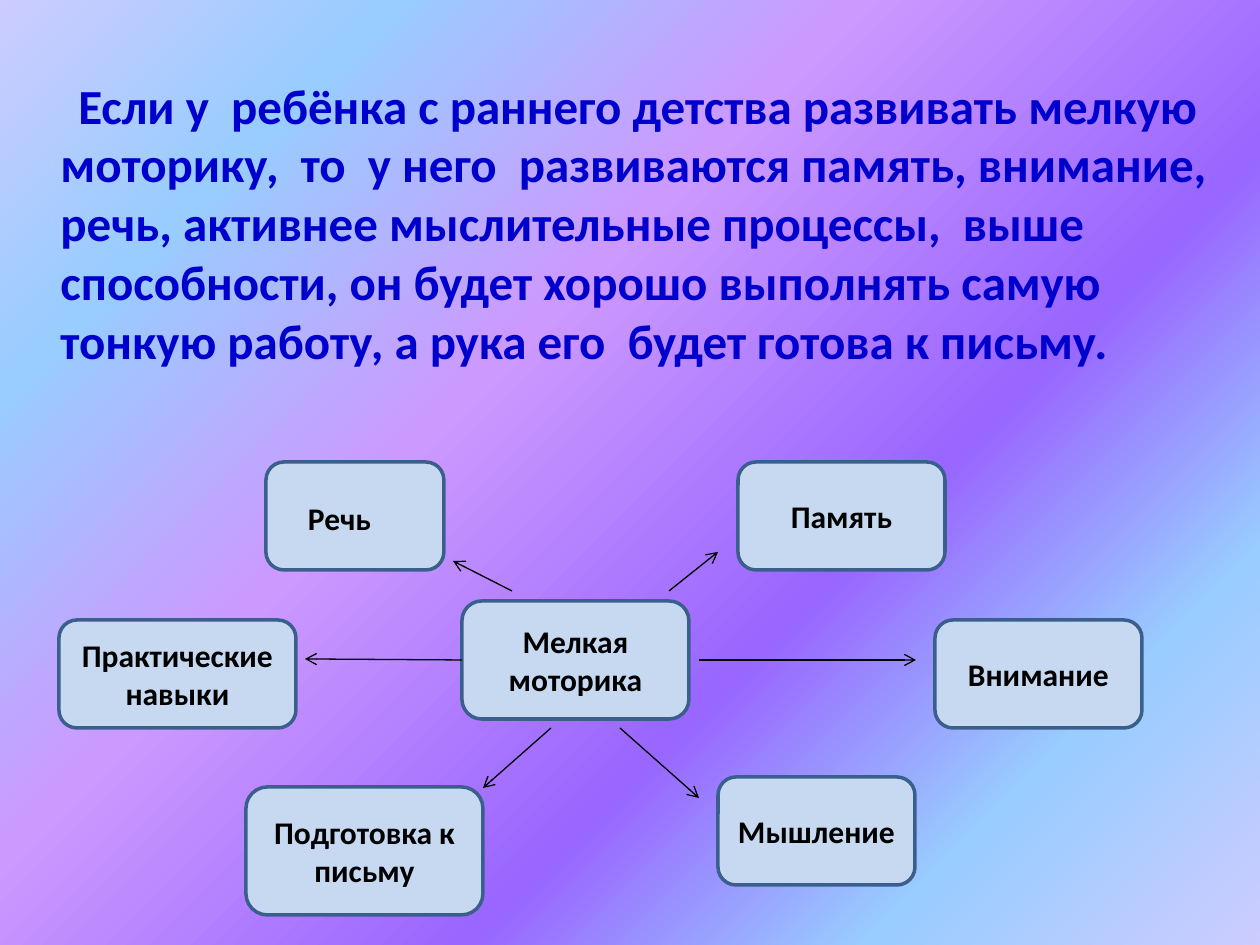
import pptx
import pptx.util
import pptx.dml.color
import pptx.enum.shapes
import pptx.enum.text
import pptx.oxml
import pptx.oxml.ns

SCALE = pptx.util.Inches(1) / 126
FONT = "Calibri"
COLORS = {
    "body": "0000CC", "label": "000000", "arrow": "000000",
    "box": "C6D9F1", "border": "3A5F8C",
    "lavender": "CCCCFF", "sky": "99CCFF", "violet": "9966FF", "pink": "CC99FF",
}
GRADIENT = [(0, "lavender"), (18, "sky"), (36, "violet"),
            (61, "pink"), (82, "sky"), (100, "lavender")]
BODY = ("Если у  ребёнка с раннего детства развивать мелкую моторику,  то  у него  "
        "развиваются память, внимание, речь, активнее мыслительные процессы,  выше "
        "способности, он будет хорошо выполнять самую тонкую работу, а рука его  "
        "будет готова к письму.")

# Label and box (left, top, width, height) within the diagram
HUB = ("Мелкая моторика", (403, 139, 227, 118))
SKILLS = [
    ("Мышление", (659, 315, 197, 108)),
    ("Практические навыки", (0, 158, 237, 108)),
    ("Подготовка к письму", (187, 325, 237, 128)),
    ("Внимание", (876, 158, 207, 108)),
    ("Память", (679, 0, 207, 108)),
]
SPEECH = ("Речь", (207, 0, 178, 108))
SPEECH_LABEL = (236, 31, 89, 50)
ARROWS = [
    ((610, 129), (659, 90)),
    ((453, 129), (394, 99)),
    ((492, 266), (424, 326)),
    ((561, 266), (640, 336)),
    ((640, 198), (857, 198)),
]
PRACTICE_ARROW = ((403, 198), (246, 197))


def px(n):
    return pptx.util.Emu(round(n * SCALE))


def rgb(name):
    return pptx.dml.color.RGBColor.from_string(COLORS[name])


def write(sp, text, size=18, color="label", align="CENTER", anchor="MIDDLE",
          wrap=True, margin=0, indent=0):
    tf = sp.text_frame
    tf.word_wrap = wrap
    tf.vertical_anchor = getattr(pptx.enum.text.MSO_ANCHOR, anchor)
    p = tf.paragraphs[0]
    p.alignment = getattr(pptx.enum.text.PP_ALIGN, align)
    if margin or indent:
        pPr = p._p.get_or_add_pPr()
        pPr.set("marL", str(px(margin)))
        pPr.set("indent", str(px(indent)))
    r = p.add_run()
    r.text = text
    r.font.name = FONT
    r.font.size = pptx.util.Pt(size)
    r.font.bold = True
    r.font.color.rgb = rgb(color)


def paint_background(s):
    fill = s.background.fill
    fill.gradient()
    stops = s._element.find(".//" + pptx.oxml.ns.qn("a:gsLst"))
    for stop in list(stops):
        stops.remove(stop)
    for percent, name in GRADIENT:
        stops.append(pptx.oxml.parse_xml(
            f'<a:gs {pptx.oxml.ns.nsdecls("a")} pos="{percent * 1000}">'
            f'<a:srgbClr val="{COLORS[name]}"/></a:gs>'))
    s._element.find(".//" + pptx.oxml.ns.qn("a:lin")).set("ang", str(225 * 60000))


def add_body(s, left, top, width, height):
    sp = s.shapes.add_textbox(px(left), px(top), px(width), px(height))
    write(sp, BODY, size=28, color="body", align="LEFT", anchor="TOP",
          margin=48, indent=18)


def add_box(s, left, top, width, height):
    sp = s.shapes.add_shape(pptx.enum.shapes.MSO_SHAPE.ROUNDED_RECTANGLE,
                            px(left), px(top), px(width), px(height))
    sp.shadow.inherit = False
    sp.fill.solid()
    sp.fill.fore_color.rgb = rgb("box")
    sp.line.color.rgb = rgb("border")
    sp.line.width = pptx.util.Pt(2)
    return sp


def add_arrow(s, x1, y1, x2, y2):
    c = s.shapes.add_connector(pptx.enum.shapes.MSO_CONNECTOR.STRAIGHT,
                               px(x1), px(y1), px(x2), px(y2))
    c.line.color.rgb = rgb("arrow")
    c.line.width = pptx.util.Pt(0.75)
    ns = pptx.oxml.ns.nsdecls("a")
    c.line._get_or_add_ln().append(pptx.oxml.parse_xml(f'<a:tailEnd {ns} type="arrow"/>'))
    c._element.spPr.append(pptx.oxml.parse_xml(f"<a:effectLst {ns}/>"))
    return c


def add_diagram(s, left, top):
    """Place the hub, the skills around it and the arrows between them."""
    def box_at(box):
        x, y, w, h = box
        return left + x, top + y, w, h

    def arrow_at(start, end):
        return add_arrow(s, left + start[0], top + start[1], left + end[0], top + end[1])

    hub = add_box(s, *box_at(HUB[1]))
    write(hub, HUB[0])
    for label, box in SKILLS:
        write(add_box(s, *box_at(box)), label)

    label, box = SPEECH
    add_box(s, *box_at(box))
    sp = s.shapes.add_textbox(*map(px, box_at(SPEECH_LABEL)))
    write(sp, label, anchor="TOP", wrap=False)

    for start, end in ARROWS:
        arrow_at(start, end)
    arrow_at(*PRACTICE_ARROW).begin_connect(hub, 1)


def main():
    prs = pptx.Presentation()
    prs.slide_width, prs.slide_height = px(1260), px(945)
    s = prs.slides.add_slide(prs.slide_layouts[6])
    paint_background(s)
    add_body(s, 0, 69, 1226, 354)
    add_diagram(s, 59, 462)
    prs.save("out.pptx")


if __name__ == "__main__":
    main()
